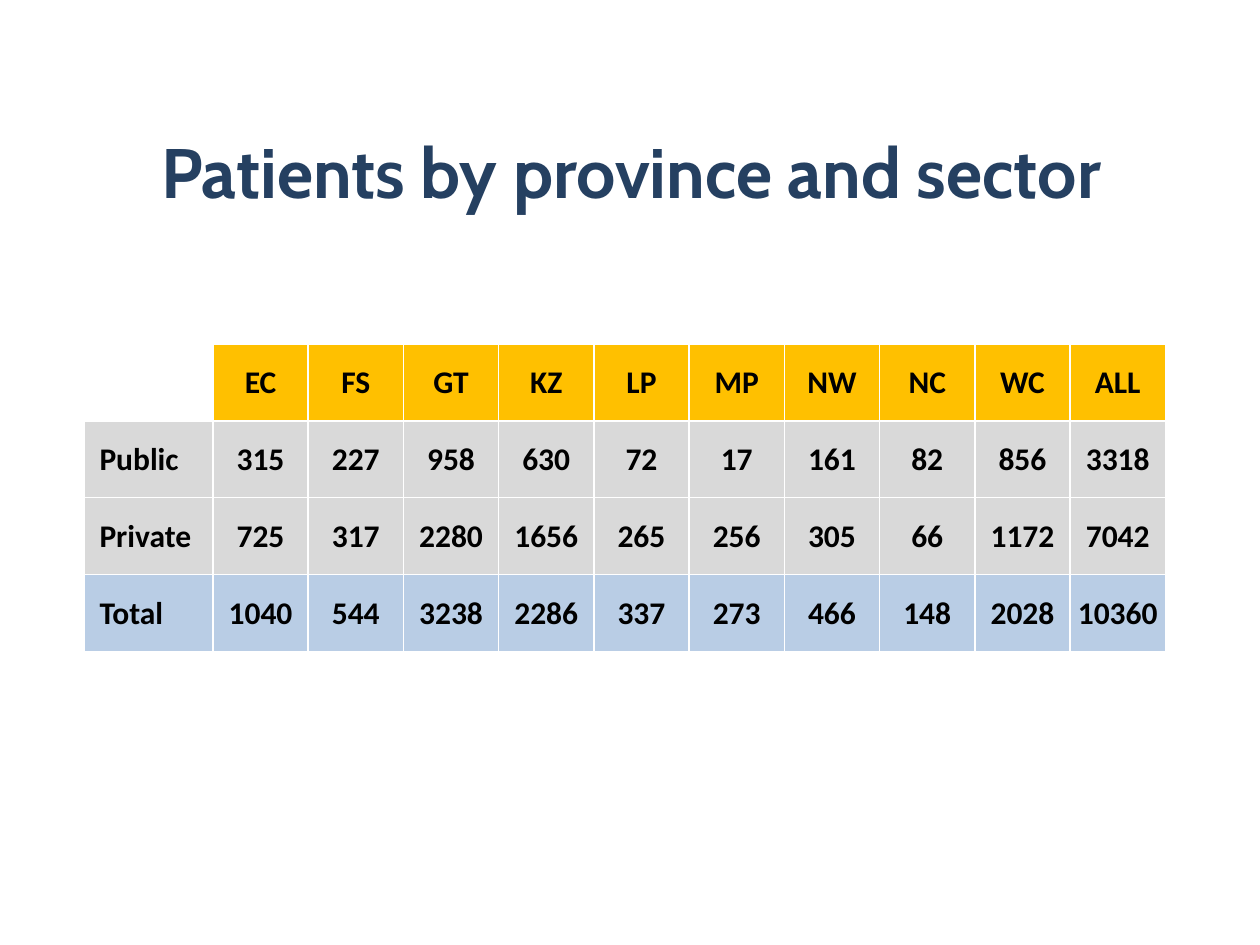
import lxml.etree
import pptx
import pptx.dml.color
import pptx.enum.text
import pptx.oxml.ns
import pptx.util

Inches = pptx.util.Inches
COLORS = {
    "title": "254061",
    "text": "000000",
    "header": "FFC000",
    "sector": "D9D9D9",
    "total": "B9CDE5",
    "border": "FFFFFF",
}
PROVINCES = ["EC", "FS", "GT", "KZ", "LP", "MP", "NW", "NC", "WC", "ALL"]
PUBLIC = [315, 227, 958, 630, 72, 17, 161, 82, 856, 3318]
PRIVATE = [725, 317, 2280, 1656, 265, 256, 305, 66, 1172, 7042]
TOTAL = [public + private for public, private in zip(PUBLIC, PRIVATE)]
ROWS = [
    ("", PROVINCES, "header"),
    ("Public", PUBLIC, "sector"),
    ("Private", PRIVATE, "sector"),
    ("Total", TOTAL, "total"),
]


def write_text(frame, text, font="Calibri", size=18, color="text", align="CENTER"):
    """Write one bold paragraph into a text frame."""
    paragraph = frame.paragraphs[0]
    paragraph.alignment = getattr(pptx.enum.text.PP_ALIGN, align)
    run = paragraph.add_run()
    run.text = text
    run.font.name = font
    run.font.size = pptx.util.Pt(size)
    run.font.bold = True
    run.font.color.rgb = pptx.dml.color.RGBColor.from_string(COLORS[color])


class SlideBuilder:
    """Hold the current slide and the style of its elements."""

    def __init__(self, presentation):
        """Add a title-only slide."""
        self.slide = presentation.slides.add_slide(presentation.slide_layouts[5])

    def title(self, text, left, top, width, height):
        """Place and format the title."""
        shape = self.slide.shapes.title
        shape.left, shape.top = Inches(left), Inches(top)
        shape.width, shape.height = Inches(width), Inches(height)
        shape.text_frame.vertical_anchor = pptx.enum.text.MSO_ANCHOR.MIDDLE
        write_text(shape.text_frame, text, font="Cabin", size=40, color="title")

    def border(self, cell):
        """Draw a thin line on all four sides of a cell."""
        properties = cell._tc.get_or_add_tcPr()
        for index, side in enumerate(("lnL", "lnR", "lnT", "lnB")):
            line = lxml.etree.Element(
                pptx.oxml.ns.qn("a:" + side), w=str(pptx.util.Pt(1))
            )
            fill = lxml.etree.SubElement(line, pptx.oxml.ns.qn("a:solidFill"))
            lxml.etree.SubElement(
                fill, pptx.oxml.ns.qn("a:srgbClr"), val=COLORS["border"]
            )
            properties.insert(index, line)

    def cell(self, cell, text, fill, align="CENTER", margin_left=0.01):
        """Format one table cell, leaving it unfilled when it has no text."""
        cell.margin_left = Inches(margin_left)
        cell.margin_right = cell.margin_top = Inches(0.01)
        cell.margin_bottom = 0
        cell.vertical_anchor = pptx.enum.text.MSO_ANCHOR.MIDDLE
        if text:
            cell.fill.solid()
            cell.fill.fore_color.rgb = pptx.dml.color.RGBColor.from_string(COLORS[fill])
            write_text(cell.text_frame, text, align=align)
        else:
            cell.fill.background()
        self.border(cell)

    def table(self, rows, left, top, label_width, value_width, row_height):
        """Add a table with one label column and equal value columns."""
        count = len(rows[0][1])
        table = self.slide.shapes.add_table(
            len(rows), count + 1, Inches(left), Inches(top),
            Inches(label_width + count * value_width),
            Inches(len(rows) * row_height),
        ).table
        for index, column in enumerate(table.columns):
            column.width = Inches(value_width if index else label_width)
        for row, (label, values, fill) in zip(table.rows, rows):
            row.height = Inches(row_height)
            label_cell, *value_cells = row.cells
            self.cell(label_cell, label, fill, align="LEFT", margin_left=0.12)
            for value_cell, value in zip(value_cells, values):
                self.cell(value_cell, str(value), fill)


def main():
    """Build and save the presentation."""
    presentation = pptx.Presentation()
    presentation.slide_width = Inches(10)
    presentation.slide_height = Inches(7.5)
    builder = SlideBuilder(presentation)
    builder.title("Patients by province and sector", 0.51, 0.84, 9, 1.02)
    builder.table(ROWS, 0.67, 2.73, 1.02, 0.756, 0.61)
    presentation.save("out.pptx")


if __name__ == "__main__":
    main()
